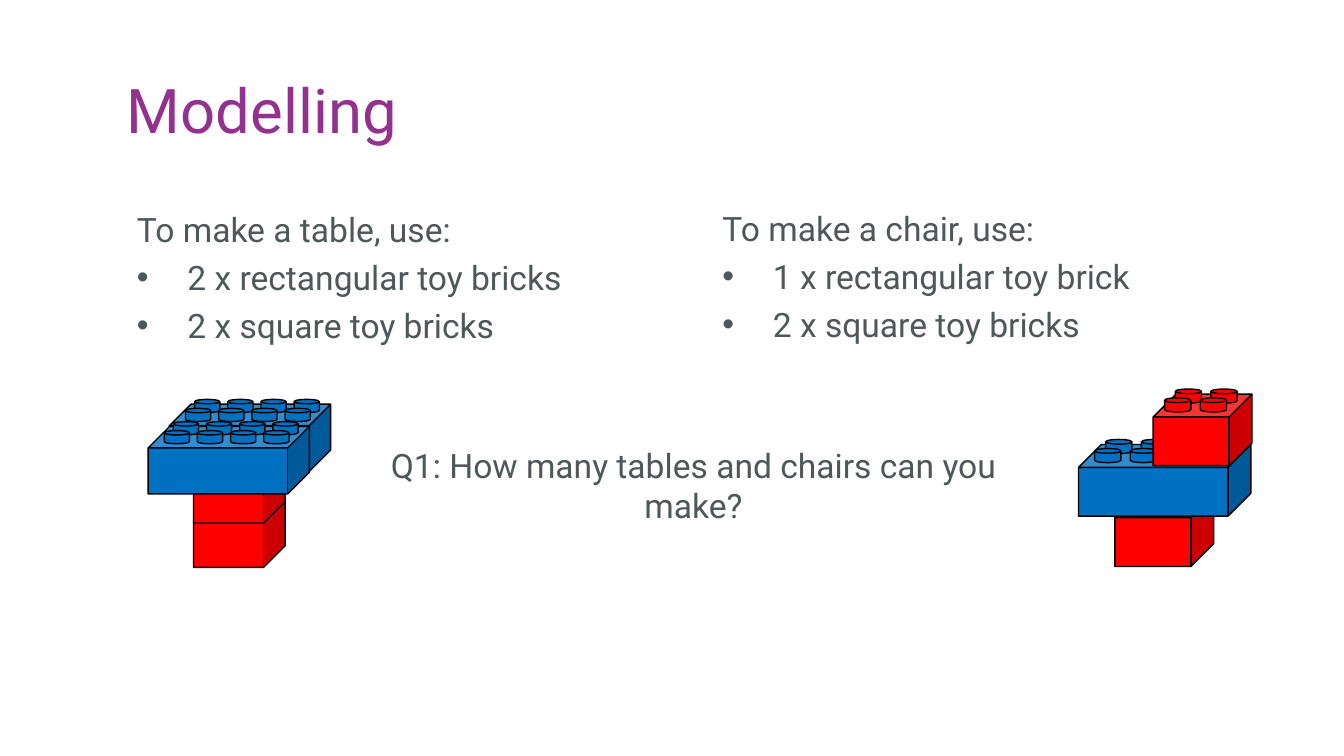
from lxml import etree
from pptx import Presentation
from pptx.dml.color import RGBColor
from pptx.enum import shapes, text
from pptx.oxml import ns
from pptx.util import Pt

PURPLE = RGBColor(0x93, 0x32, 0x8E)
GREY = RGBColor(0x50, 0x57, 0x59)
RED = RGBColor(0xFF, 0x00, 0x00)
BLUE = RGBColor(0x00, 0x70, 0xC0)
BLACK = RGBColor(0x00, 0x00, 0x00)
FONT = "Roboto"

TITLE = "Modelling"
QUESTION = "Q1: How many tables and chairs can you make?"

# left, top, width, height, heading, bullets
RECIPES = [
    (90.7, 145.4, 455, 105.8, "To make a table, use:",
     ["2 x rectangular toy bricks", "2 x square toy bricks"]),
    (509, 144.7, 480.2, 146.9, "To make a chair, use:",
     ["1 x rectangular toy brick", "2 x square toy bricks"]),
]

# Stud rows are (x, y) offsets of the first stud from its brick, back row first.
# Bricks, from back to front: left, top, width, colour, studs per row, stud rows
TABLE = {
    "height": 48.2, "stud": (18, 9.4), "pitch": 23.7,
    "bricks": [
        (138.2, 357.1, 65.5, RED, 0, []),
        (138.2, 325.4, 65.5, RED, 0, []),
        (121, 288.7, 115.2, BLUE, 4, [(18, -3.4), (11.5, 3)]),
        (105.8, 304.6, 115.2, BLUE, 4, [(18, -3.4), (11.5, 3)]),
    ],
}
CHAIR = {
    "height": 51.1, "stud": (18.7, 10.1), "pitch": 25.5,
    "bricks": [
        (796.3, 353.5, 70.6, RED, 0, []),
        (770.4, 317.5, 123.1, BLUE, 2, [(19.4, -3.6), (11.5, 2.9)]),
        (823.7, 281.5, 70.6, RED, 2, [(15.8, -3.6), (8.2, 2.7)]),
    ],
}
CUBE_DEPTH = 0.319


def add_text(page, left, top, width, height, lines, size, colour):
    box = page.shapes.add_textbox(Pt(left), Pt(top), Pt(width), Pt(height))
    frame = box.text_frame
    frame.word_wrap = True
    frame.text = "\n".join(lines)
    for para in frame.paragraphs:
        para.font.name = FONT
        para.font.size = Pt(size)
        para.font.color.rgb = colour
    return frame


def add_bullet(para):
    props = para._p.get_or_add_pPr()
    props.set("marL", str(Pt(36)))
    props.set("indent", str(-Pt(36)))
    font = etree.Element(ns.qn("a:buFont"), typeface="Arial")
    mark = etree.Element(ns.qn("a:buChar"), char="•")
    props.insert(0, font)
    props.insert(1, mark)
    para.space_before = Pt(5.5)


def add_solid(group, kind, left, top, width, height, colour):
    solid = group.shapes.add_shape(kind, Pt(left), Pt(top), Pt(width), Pt(height))
    solid.shadow.inherit = False
    solid.fill.solid()
    solid.fill.fore_color.rgb = colour
    solid.line.color.rgb = BLACK
    solid.line.width = Pt(1)
    return solid


def add_model(page, model):
    """Stack the bricks of one piece of furniture, with their visible studs."""
    group = page.shapes.add_group_shape()
    for left, top, width, colour, columns, rows in model["bricks"]:
        cube = add_solid(group, shapes.MSO_SHAPE.CUBE, left, top, width,
                         model["height"], colour)
        cube.adjustments[0] = CUBE_DEPTH
        for dx, dy in rows:
            for column in range(columns):
                add_solid(group, shapes.MSO_SHAPE.FLOWCHART_MAGNETIC_DISK,
                          left + dx + column * model["pitch"], top + dy,
                          *model["stud"], colour)


def main():
    deck = Presentation()
    deck.slide_width, deck.slide_height = Pt(960), Pt(540)
    page = deck.slides.add_slide(deck.slide_layouts[6])

    for left, top, width, height, heading, bullets in RECIPES:
        frame = add_text(page, left, top, width, height, [heading, *bullets], 24, GREY)
        for para in frame.paragraphs[1:]:
            add_bullet(para)

    for model in (TABLE, CHAIR):
        add_model(page, model)

    title = add_text(page, 90.7, 28.8, 803.5, 104.4, [TITLE], 44, PURPLE)
    title.margin_left = 0
    title.vertical_anchor = text.MSO_ANCHOR.MIDDLE
    title.paragraphs[0].line_spacing = 0.9

    question = add_text(page, 239.8, 313.9, 511.2, 65.5, [QUESTION], 24, GREY)
    question.paragraphs[0].alignment = text.PP_ALIGN.CENTER

    deck.save("out.pptx")


if __name__ == "__main__":
    main()
